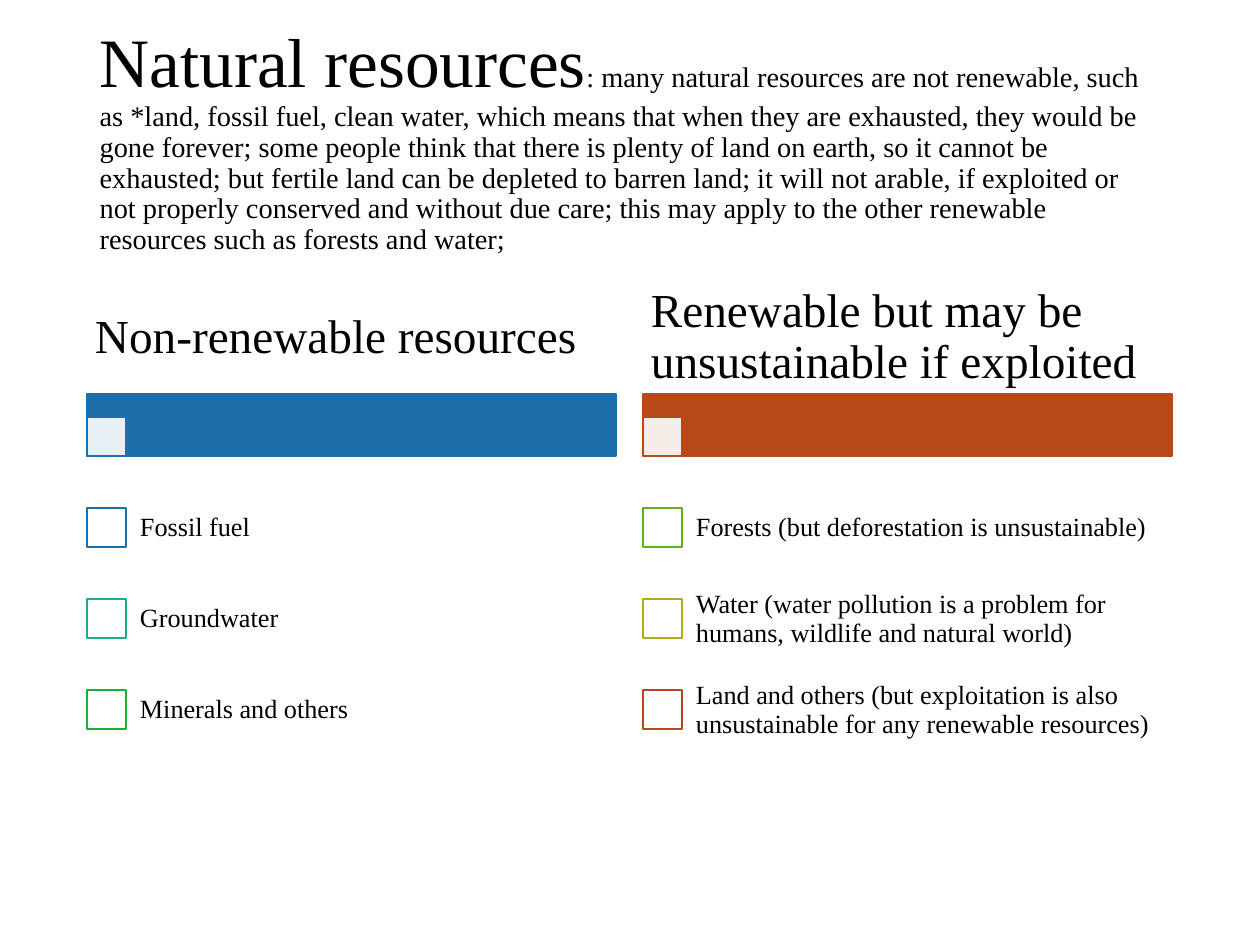
from dataclasses import dataclass

from lxml.etree import SubElement
from pptx import Presentation
from pptx.dml.color import RGBColor
from pptx.enum.shapes import MSO_SHAPE as Preset
from pptx.enum.text import MSO_ANCHOR as Anchor, MSO_AUTO_SIZE as AutoSize, PP_ALIGN as Align
from pptx.oxml.ns import qn
from pptx.util import Emu, Pt

PX_PER_INCH = 126
FONT = "Times New Roman"

BLACK = RGBColor(0x00, 0x00, 0x00)
WHITE = RGBColor(0xFF, 0xFF, 0xFF)
BLUE = RGBColor(0x1D, 0x6F, 0xA9)
TEAL = RGBColor(0x1C, 0xAC, 0x8E)
GREEN = RGBColor(0x1B, 0xAF, 0x34)
LIME = RGBColor(0x5F, 0xB1, 0x1B)
OLIVE = RGBColor(0xB4, 0xA9, 0x1A)
RUST = RGBColor(0xB7, 0x49, 0x19)

COLUMN_WIDTH = 529
HEADING_TOP, HEADING_HEIGHT = 282, 112
BAR_TOP, BAR_HEIGHT = 394, 62
BOX_SIZE = 39
ROWS_TOP, ROW_HEIGHT = 483, 91
LABEL_INDENT = 38

TITLE_LEAD = "Natural resources"
TITLE_BODY = (
    ": many natural resources are not renewable, such as *land, fossil fuel, clean water, "
    "which means that when they are exhausted, they would be gone forever; some people think "
    "that there is plenty of land on earth, so it cannot be exhausted; but fertile land can be "
    "depleted to barren land; it will not arable, if exploited or not properly conserved and "
    "without due care; this may apply to the other renewable resources such as forests and water;"
)


@dataclass(frozen=True)
class Item:
    label: str
    color: RGBColor


@dataclass(frozen=True)
class Column:
    left: int
    heading: str
    color: RGBColor
    items: tuple[Item, ...]


COLUMNS = (
    Column(87, "Non-renewable resources", BLUE, (
        Item("Fossil fuel", BLUE),
        Item("Groundwater", TEAL),
        Item("Minerals and others", GREEN),
    )),
    Column(643, "Renewable but may be unsustainable if exploited", RUST, (
        Item("Forests (but deforestation is unsustainable)", LIME),
        Item("Water (water pollution is a problem for humans, wildlife and natural world)", OLIVE),
        Item("Land and others (but exploitation is also unsustainable "
             "for any renewable resources)", RUST),
    )),
)


def px(length: int) -> Emu:
    return Emu(round(length * 914400 / PX_PER_INCH))


def format_run(run, size: float) -> None:
    run.font.name = FONT
    run.font.size = Pt(size)
    run.font.color.rgb = BLACK


def format_frame(frame) -> None:
    frame.word_wrap = True
    frame.auto_size = AutoSize.NONE
    frame.vertical_anchor = Anchor.MIDDLE
    frame.paragraphs[0].alignment = Align.LEFT
    frame.paragraphs[0].line_spacing = 0.9


def add_title(slide) -> None:
    title = slide.shapes.title
    title.left, title.top, title.width, title.height = map(px, (87, 50, 1086, 183))
    format_frame(title.text_frame)
    for text, size in ((TITLE_LEAD, 39.6), (TITLE_BODY, 16.2)):
        run = title.text_frame.paragraphs[0].add_run()
        run.text = text
        format_run(run, size)


def add_rectangle(slide, left: int, top: int, width: int, height: int,
                  fill: RGBColor, line: RGBColor, opacity: int = 100) -> None:
    """Draw an outlined rectangle; opacity is the fill's, in percent."""
    rectangle = slide.shapes.add_shape(Preset.RECTANGLE, *map(px, (left, top, width, height)))
    rectangle.shadow.inherit = False
    rectangle.fill.solid()
    rectangle.fill.fore_color.rgb = fill
    rectangle.line.color.rgb = line
    rectangle.line.width = Pt(1)
    if opacity < 100:
        fill_color = rectangle.fill._xPr.find(qn("a:solidFill"))[0]
        SubElement(fill_color, qn("a:alpha")).set("val", str(opacity * 1000))


def add_label(slide, left: int, top: int, width: int, height: int,
              text: str, size: float, inset_x: int, inset_y: int) -> None:
    frame = slide.shapes.add_textbox(*map(px, (left, top, width, height))).text_frame
    frame.text = text
    format_frame(frame)
    frame.margin_left = frame.margin_right = px(inset_x)
    frame.margin_top = frame.margin_bottom = px(inset_y)
    format_run(frame.paragraphs[0].runs[0], size)


def add_column(slide, column: Column) -> None:
    left = column.left
    add_rectangle(slide, left, BAR_TOP, COLUMN_WIDTH, BAR_HEIGHT, column.color, column.color)
    add_rectangle(slide, left, BAR_TOP + BAR_HEIGHT - BOX_SIZE, BOX_SIZE, BOX_SIZE,
                  WHITE, column.color, opacity=90)
    add_label(slide, left, HEADING_TOP, COLUMN_WIDTH, HEADING_HEIGHT, column.heading, 27, 8, 5)
    for row, item in enumerate(column.items):
        top = ROWS_TOP + row * ROW_HEIGHT
        box_top = top + (ROW_HEIGHT - BOX_SIZE) // 2 - 1
        add_rectangle(slide, left, box_top, BOX_SIZE, BOX_SIZE, WHITE, item.color)
        add_label(slide, left + LABEL_INDENT, top, COLUMN_WIDTH - LABEL_INDENT, ROW_HEIGHT,
                  item.label, 15, 15, 15)


def main() -> None:
    deck = Presentation()
    deck.slide_width, deck.slide_height = px(1260), px(945)
    slide = deck.slides.add_slide(deck.slide_layouts.get_by_name("Title Only"))
    add_title(slide)
    for column in COLUMNS:
        add_column(slide, column)
    deck.save("out.pptx")


if __name__ == "__main__":
    main()
